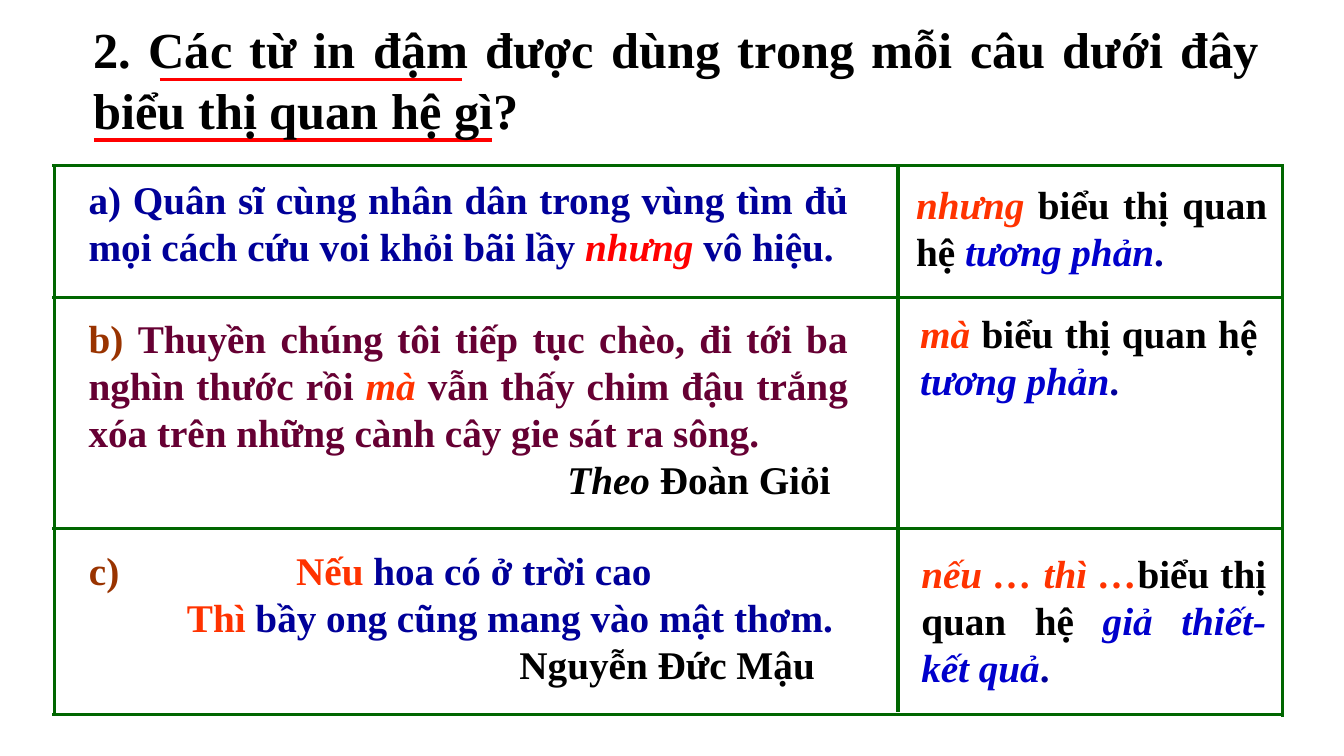
from lxml import etree
from pptx import Presentation
from pptx.dml.color import RGBColor
from pptx.enum import shapes, text
from pptx.oxml import ns
from pptx.util import Pt

BLACK = RGBColor(0x00, 0x00, 0x00)
RED = RGBColor(0xFF, 0x00, 0x00)
GREEN = RGBColor(0x00, 0x66, 0x00)
NAVY = RGBColor(0x00, 0x00, 0x99)
BLUE = RGBColor(0x00, 0x00, 0xCC)
BROWN = RGBColor(0x99, 0x33, 0x00)
PLUM = RGBColor(0x66, 0x00, 0x33)
ORANGE = RGBColor(0xFF, 0x33, 0x00)


def write(para, words, color=BLACK, size=28, italic=False):
    para.alignment = text.PP_ALIGN.JUSTIFY
    run = para.add_run()
    run.text = words
    font = run.font
    font.name, font.size, font.bold, font.italic = "Times New Roman", Pt(size), True, italic
    font.color.rgb = color


def rule(x1, y1, x2, y2, color=GREEN):
    line = slide.shapes.add_connector(shapes.MSO_CONNECTOR.STRAIGHT, Pt(x1), Pt(y1), Pt(x2), Pt(y2))
    line.line.color.rgb = color
    line.line.width = Pt(2.25)
    etree.SubElement(line._element.spPr, ns.qn("a:effectLst"))


prs = Presentation()
prs.slide_width, prs.slide_height = Pt(960), Pt(540)
slide = prs.slides.add_slide(prs.slide_layouts[5])

# Red underlines beneath the key words of the title
rule(114, 56.75, 330, 56.75, color=RED)
rule(67, 100, 351.5, 100, color=RED)

# Title, in front of the underlines
title = slide.shapes.title
title.left, title.top, title.width, title.height = Pt(59.5), Pt(9.5), Pt(847.5), Pt(93.5)
frame = title.text_frame
frame.word_wrap = True
frame.auto_size = text.MSO_AUTO_SIZE.NONE
frame.vertical_anchor = text.MSO_ANCHOR.TOP
write(frame.paragraphs[0], "2. Các từ in đậm được dùng trong mỗi câu dưới đây biểu thị quan hệ gì?", size=36)
title.element.getparent().append(title.element)

# Green ruling: the divider stops just above the bottom line
for x, end in [(641.5, 508.5), (39, 510.5), (916, 512)]:
    rule(x, 118, x, end)
for y in [118, 510.5, 212.5, 377.5]:
    rule(37.5, y, 917.5, y)

# Each box: left, top, width, height, then paragraphs of (indent, hanging, runs)
# A run is words, colour and whether it is italic
boxes = [
    ((56.25, 121.5, 556.5, 74), [
        (0, 0, [("a) Quân sĩ cùng nhân dân trong vùng tìm đủ mọi cách cứu voi khỏi bãi lầy ", NAVY, False),
                ("nhưng", RED, True), (" vô hiệu.", NAVY, False)])]),
    ((56.25, 221, 556.5, 142), [
        (0, 0, [("b) ", BROWN, False),
                ("Thuyền chúng tôi tiếp tục chèo, đi tới ba nghìn thước rồi ", PLUM, False),
                ("mà ", ORANGE, True),
                ("vẫn thấy chim đậu trắng xóa trên những cành cây gie sát ra sông.", PLUM, False)]),
        (342, 0, [("Theo", BLACK, True), (" Đoàn Giỏi", BLACK, False)])]),
    ((56.5, 386.5, 556.5, 108), [
        (148, 148, [("c)\t", BROWN, False), ("Nếu", ORANGE, False), (" hoa có ở trời cao", NAVY, False)]),
        (70, 0, [("Thì", ORANGE, False), (" bầy ong cũng mang vào mật thơm.", NAVY, False)]),
        (307.5, 0, [("Nguyễn Đức Mậu", BLACK, False)])]),
]

# Answers: box, the linking word and the relation it expresses
answers = [
    ((647.25, 125.25, 265, 74), "nhưng ", "tương phản"),
    ((650.25, 217.25, 255, 74), "mà ", "tương phản"),
    ((651, 389, 260.5, 108), "nếu … thì …", "giả thiết- kết quả"),
]
for spot, link, sense in answers:
    boxes.append((spot, [(0, 0, [(link, ORANGE, True), ("biểu thị quan hệ ", BLACK, False),
                                 (sense, BLUE, True), (".", NAVY, False)])]))

# Text of the cells
for spot, paras in boxes:
    frame = slide.shapes.add_textbox(*map(Pt, spot)).text_frame
    frame.word_wrap = True
    for i, (indent, hang, runs) in enumerate(paras):
        para = frame.paragraphs[0] if i == 0 else frame.add_paragraph()
        for words, color, italic in runs:
            write(para, words, color=color, italic=italic)
        form = para._p.get_or_add_pPr()
        form.set("marL", str(Pt(indent)))
        form.set("indent", str(-Pt(hang)))

prs.save("out.pptx")
